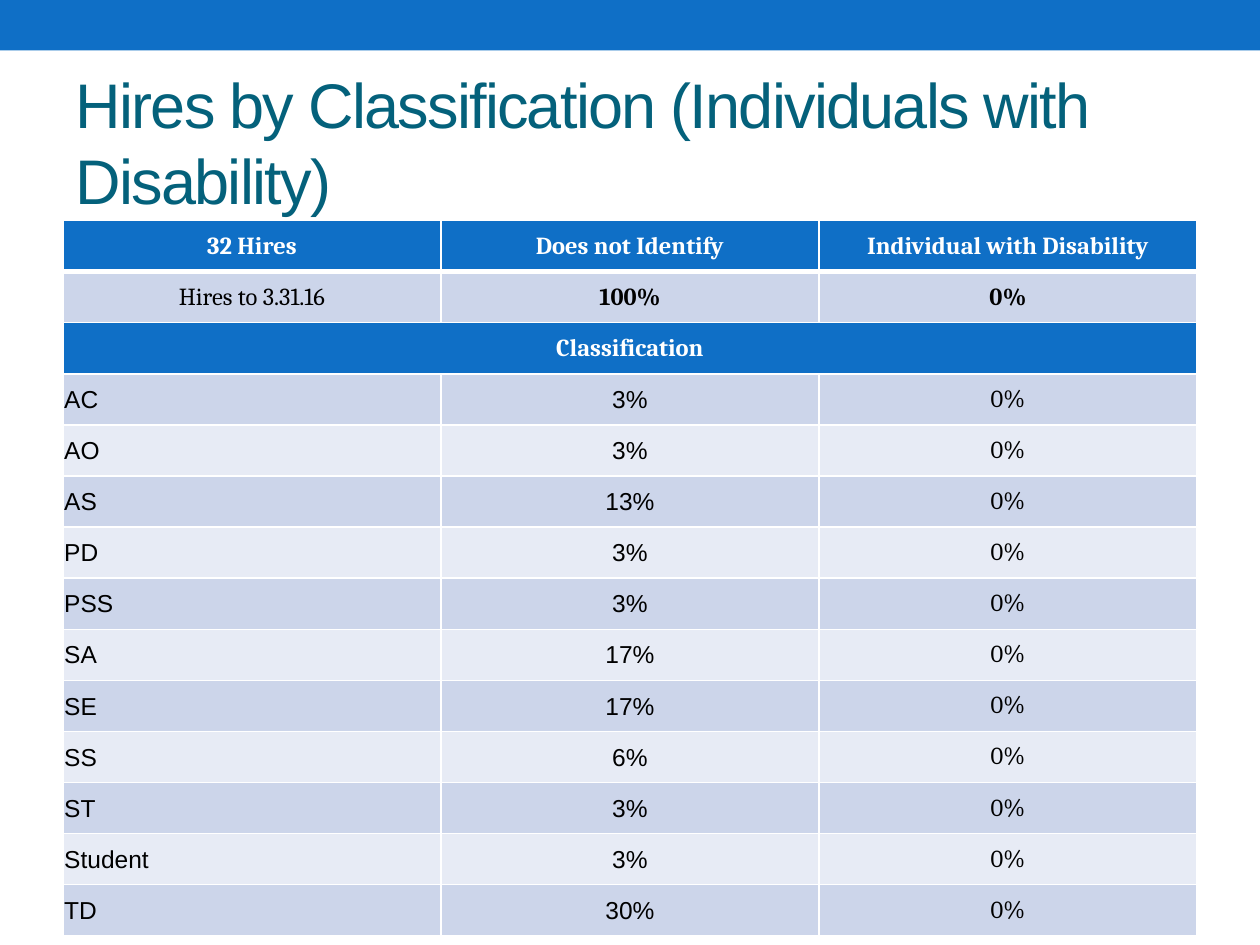
from lxml import etree
from pptx import Presentation
from pptx import util as u
from pptx.dml.color import RGBColor
from pptx.enum import shapes, text
from pptx.oxml.ns import qn

SCALE = 9144
COLORS = {
    "blue": "0F6FC6",
    "teal": "04617B",
    "white": "FFFFFF",
    "black": "000000",
    "dark_band": "CCD5EA",
    "light_band": "E7EBF5",
}
HEADINGS = ["32 Hires", "Does not Identify", "Individual with Disability"]
TOTALS = ["Hires to 3.31.16", "100%", "0%"]
SECTION = "Classification"
CLASSIFICATIONS = [
    ("AC", "3%"), ("AO", "3%"), ("AS", "13%"), ("PD", "3%"),
    ("PSS", "3%"), ("SA", "17%"), ("SE", "17%"), ("SS", "6%"),
    ("ST", "3%"), ("Student", "3%"), ("TD", "30%"),
]
TIGHT = {"margin_left": 1, "margin_right": 1, "margin_top": 1, "margin_bottom": 0}


def px(value):
    return u.Emu(round(value * SCALE))


def color(name):
    return RGBColor.from_string(COLORS[name])


def set_all(target, values):
    for name, value in values.items():
        setattr(target, name, value)


def add_banner(slide, left, top, width, height):
    banner = slide.shapes.add_shape(
        shapes.MSO_SHAPE.RECTANGLE, px(left), px(top), px(width), px(height))
    banner.shadow.inherit = False
    banner.fill.solid()
    banner.fill.fore_color.rgb = color("blue")
    banner.line.fill.background()


def place_title(slide, left, top, width, height, wording):
    title = slide.shapes.title
    set_all(title, {"left": px(left), "top": px(top),
                    "width": px(width), "height": px(height)})
    frame = title.text_frame
    set_all(frame, {"word_wrap": True, "auto_size": text.MSO_AUTO_SIZE.NONE,
                    "vertical_anchor": text.MSO_ANCHOR.MIDDLE})
    paragraph = frame.paragraphs[0]
    paragraph.alignment = text.PP_ALIGN.LEFT
    run = paragraph.add_run()
    run.text = wording
    set_all(run.font, {"size": u.Pt(36), "name": "Arial"})
    run.font.color.rgb = color("teal")
    run._r.get_or_add_rPr().set("spc", "-100")


def add_borders(cell, **widths):
    properties = cell._tc.get_or_add_tcPr()
    for side in "LRTB":
        width = u.Pt(widths.get(side, 1))
        line = etree.SubElement(properties, qn(f"a:ln{side}"), w=str(width))
        fill = etree.SubElement(line, qn("a:solidFill"))
        etree.SubElement(fill, qn("a:srgbClr"), val=COLORS["white"])


def format_cell(cell, wording, fill, font="Cambria", ink="black", bold=False,
                align=text.PP_ALIGN.CENTER, margins=None, borders=None):
    add_borders(cell, **(borders or {}))
    cell.fill.solid()
    cell.fill.fore_color.rgb = color(fill)
    cell.vertical_anchor = text.MSO_ANCHOR.MIDDLE
    set_all(cell, {name: px(value) for name, value in (margins or {}).items()})
    paragraph = cell.text_frame.paragraphs[0]
    paragraph.alignment = align
    if wording:
        run = paragraph.add_run()
        run.text = wording
        set_all(run.font, {"size": u.Pt(14), "name": font, "bold": bold})
        run.font.color.rgb = color(ink)


def add_hires_table(slide, left, top, width, height):
    row_count, column_count = len(CLASSIFICATIONS) + 3, len(HEADINGS)
    table = slide.shapes.add_table(
        row_count, column_count, px(left), px(top), px(width), px(height)).table
    for column in table.columns:
        column.width = px(width / column_count)
    for row in table.rows:
        row.height = px(height / row_count)

    heading_style = {"fill": "blue", "ink": "white", "bold": True}
    for column, (heading, total) in enumerate(zip(HEADINGS, TOTALS)):
        format_cell(table.cell(0, column), heading, borders={"B": 3}, **heading_style)
        format_cell(table.cell(1, column), total, "dark_band",
                    bold=column > 0, borders={"T": 3})
        format_cell(table.cell(2, column), "" if column else SECTION, **heading_style)
    table.cell(2, 0).merge(table.cell(2, column_count - 1))

    for index, (name, share) in enumerate(CLASSIFICATIONS):
        row = index + 3
        band = "light_band" if index % 2 else "dark_band"
        format_cell(table.cell(row, 0), name, band, font="Arial",
                    align=text.PP_ALIGN.LEFT, margins=TIGHT)
        format_cell(table.cell(row, 1), share, band, font="Arial", margins=TIGHT)
        format_cell(table.cell(row, 2), "0%", band)


def main():
    presentation = Presentation()
    set_all(presentation, {"slide_width": px(1000), "slide_height": px(750)})
    slide = presentation.slides.add_slide(presentation.slide_layouts[5])
    add_banner(slide, 0, 0, 1000, 40)
    place_title(slide, 50, 58, 900, 108,
                "Hires by Classification (Individuals with Disability)")
    add_hires_table(slide, 50, 175, 900, 568)
    presentation.save("out.pptx")


if __name__ == "__main__":
    main()
